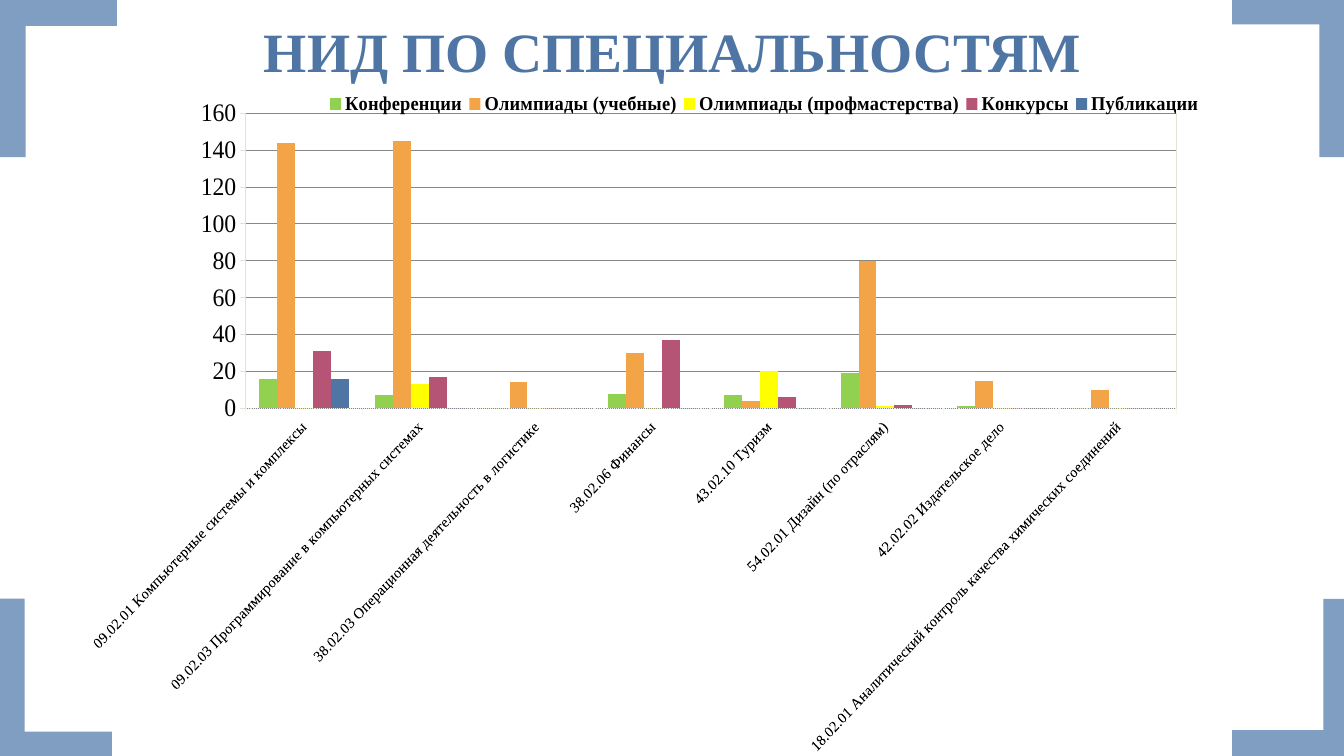
from lxml import etree
from pptx import Presentation
from pptx import util as u
from pptx.chart import data
from pptx.dml import color
from pptx.enum import chart as charts
from pptx.enum import dml, shapes, text
from pptx.oxml import parse_xml
from pptx.oxml.ns import nsdecls, qn

COLORS = {
    "corner": "809EC2", "title": "4E75A3", "text": "000000", "grid": "878787",
    "base": "EDF0E9", "scale": "DDE5D4", "green": "92D050", "orange": "F3A447",
    "yellow": "FFFF00", "plum": "B55475", "blue": "4E75A3",
}

CORNERS = [
    (0, 5.94, 1.11, 1.56, 0),
    (12.22, 0, 1.11, 1.56, 180),
    (12.02, 6.14, 1.56, 1.16, 270),
    (-0.2, 0.2, 1.56, 1.16, 90),
]

SPECIALTIES = [
    "09.02.01 Компьютерные системы и комплексы",
    "09.02.03 Программирование в компьютерных системах",
    "38.02.03 Операционная деятельность в логистике",
    "38.02.06 Финансы",
    "43.02.10 Туризм",
    "54.02.01 Дизайн (по отраслям)",
    "42.02.02 Издательское дело",
    "18.02.01 Аналитический контроль качества химических соединений",
]

ACTIVITIES = [
    ("Конференции", "green", (16, 7, 0, 8, 7, 19, 1, 0)),
    ("Олимпиады (учебные)", "orange", (144, 145, 14, 30, 4, 80, 15, 10)),
    ("Олимпиады (профмастерства)", "yellow", (0, 13, 0, 0, 20, 1, 0, 0)),
    ("Конкурсы", "plum", (31, 17, 0, 37, 6, 2, 0, 0)),
    ("Публикации", "blue", (16, 0, 0, 0, 0, 0, 0, 0)),
]


def shade(name):
    """Return the named colour."""
    return color.RGBColor.from_string(COLORS[name])


def style_font(font, size, tone="text", bold=False, name="Times New Roman"):
    """Set the face, size, weight and colour of a font."""
    font.name, font.size, font.bold = name, u.Pt(size), bold
    font.color.rgb = shade(tone)


def style_line(line, tone, width=0.75):
    """Set the colour and width of a line."""
    line.color.rgb = shade(tone)
    line.width = u.Pt(width)


def write(frame, words, size, tone, bold=False, outline=None):
    """Put one centred paragraph in a text frame."""
    para = frame.paragraphs[0]
    para.alignment = text.PP_ALIGN.CENTER
    para.line_spacing = 0.9
    span = para.add_run()
    span.text = words
    style_font(span.font, size, tone, bold)
    if outline:
        edge = parse_xml(
            f'<a:ln {nsdecls("a")} w="{int(u.Pt(outline))}"><a:solidFill>'
            f'<a:srgbClr val="{COLORS[tone]}"/></a:solidFill></a:ln>')
        span.font._element.insert(0, edge)


def place(element, index, left, top, width, height, inner=False):
    """Give a chart part a manual layout in fractions of the chart."""
    for old in element.findall(qn("c:layout")):
        element.remove(old)
    layout = parse_xml(f'<c:layout {nsdecls("c")}><c:manualLayout/></c:layout>')
    settings = [("layoutTarget", "inner")] if inner else []
    settings += [("xMode", "edge"), ("yMode", "edge"),
                 ("x", left), ("y", top), ("w", width), ("h", height)]
    for tag, value in settings:
        etree.SubElement(layout[0], qn(f"c:{tag}")).set("val", str(value))
    element.insert(index, layout)


class Page:
    """Holds the deck and the current slide."""

    def __init__(self, deck):
        """Add a title-only slide."""
        self.slide = deck.slides.add_slide(deck.slide_layouts[5])

    def corner(self, left, top, width, height, turn):
        """Draw an L-shaped corner."""
        shape = self.slide.shapes.add_shape(
            shapes.MSO_SHAPE.CORNER, *map(u.Inches, (left, top, width, height)))
        shape.shadow.inherit = False
        shape.rotation = turn
        shape.adjustments[0], shape.adjustments[1] = 0.218, 0.221
        shape.fill.solid()
        shape.fill.fore_color.rgb = shade("corner")
        shape.line.fill.background()

    def title(self, words):
        """Move and fill the title placeholder."""
        box = self.slide.shapes.title
        box.left, box.top, box.width, box.height = map(
            u.Inches, (0.92, 0.2, 11.5, 0.69))
        frame = box.text_frame
        frame.word_wrap = True
        frame.auto_size = text.MSO_AUTO_SIZE.NONE
        frame.vertical_anchor = text.MSO_ANCHOR.MIDDLE
        write(frame, words, 39.6, "title", bold=True, outline=2.48)

    def columns(self, categories, series):
        """Draw the clustered column chart."""
        values = data.CategoryChartData()
        values.categories = categories
        for name, _, numbers in series:
            values.add_series(name, numbers)
        chart = self.slide.shapes.add_chart(
            charts.XL_CHART_TYPE.COLUMN_CLUSTERED,
            *map(u.Inches, (0.89, 0.88, 11.5, 6.62)), values).chart
        chart.has_title = False
        style_font(chart.font, 18, name="Calibri")
        plot = chart.plots[0]
        plot.gap_width, plot.overlap, plot.vary_by_categories = 150, 0, False
        for bars, (_, tone, _) in zip(plot.series, series):
            bars.format.fill.solid()
            bars.format.fill.fore_color.rgb = shade(tone)
            bars.invert_if_negative = False
        self.axes(chart)
        self.legend(chart)
        area = chart._chartSpace.chart.plotArea
        place(area, 0, 0.079, 0.037, 0.854, 0.442, inner=True)
        area.append(parse_xml(
            f'<c:spPr {nsdecls("c", "a")}><a:noFill/><a:ln w="9525"><a:solidFill>'
            f'<a:srgbClr val="{COLORS["scale"]}"/></a:solidFill></a:ln></c:spPr>'))

    def axes(self, chart):
        """Format both axes and the gridlines."""
        for axis, size, tone in ((chart.category_axis, 11, "base"),
                                 (chart.value_axis, 18, "scale")):
            axis.major_tick_mark = charts.XL_TICK_MARK.OUTSIDE
            axis.minor_tick_mark = charts.XL_TICK_MARK.NONE
            style_font(axis.tick_labels.font, size)
            style_line(axis.format.line, tone)
        base, scale = chart.category_axis, chart.value_axis
        base.format.line.dash_style = dml.MSO_LINE.ROUND_DOT
        base.tick_labels.font._element.getparent().getparent().getparent().find(
            qn("a:bodyPr")).set("rot", "-2700000")
        scale.minimum_scale, scale.maximum_scale, scale.major_unit = 0, 160, 20
        scale.has_major_gridlines = True
        style_line(scale.major_gridlines.format.line, "grid")

    def legend(self, chart):
        """Lay the legend in one row above the columns."""
        chart.has_legend = True
        legend = chart.legend
        legend.position = charts.XL_LEGEND_POSITION.RIGHT
        legend.include_in_layout = False
        style_font(legend.font, 14, bold=True)
        place(legend._element, 1, 0.15, 0.003, 0.81, 0.04)


def main():
    """Build and save the slide."""
    deck = Presentation()
    deck.slide_width, deck.slide_height = u.Inches(13.33), u.Inches(7.5)
    page = Page(deck)
    for corner in CORNERS:
        page.corner(*corner)
    page.title("НИД ПО СПЕЦИАЛЬНОСТЯМ")
    page.columns(SPECIALTIES, ACTIVITIES)
    deck.save("out.pptx")


if __name__ == "__main__":
    main()
